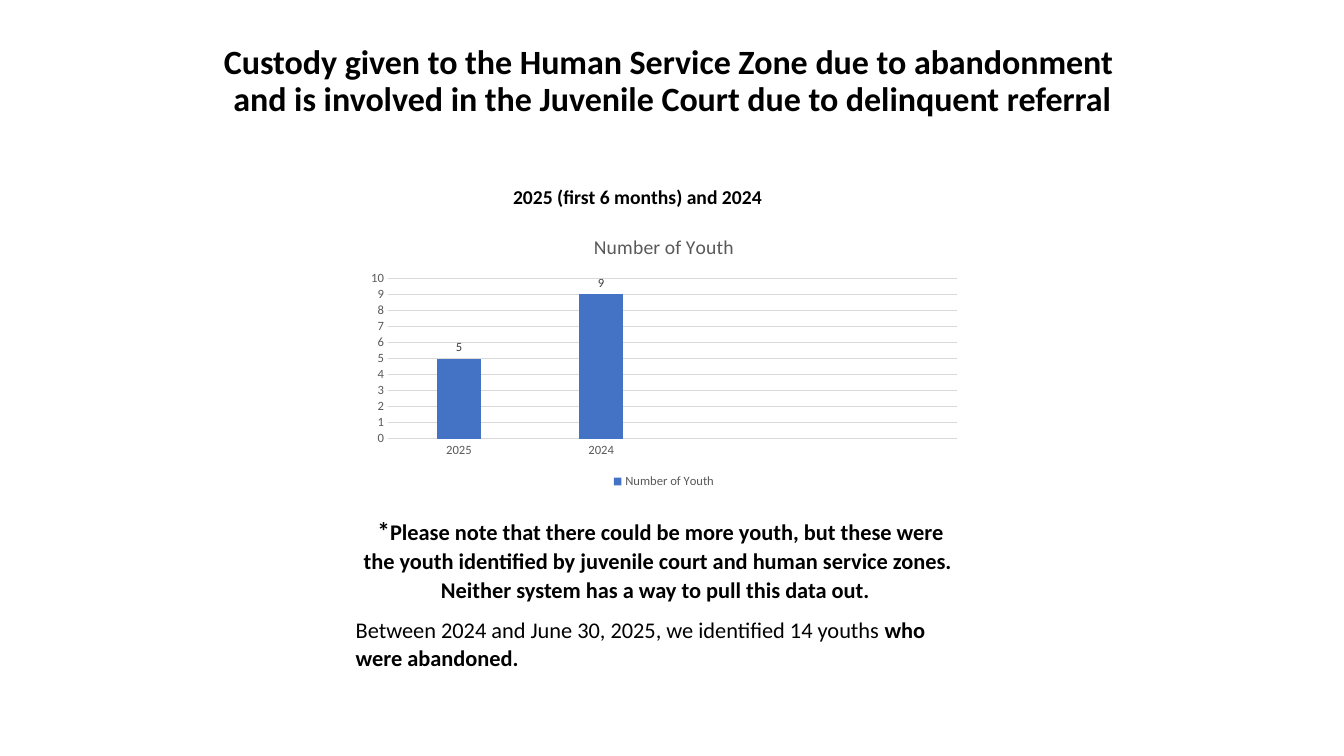
import pptx
import pptx.chart.data
import pptx.dml.color
import pptx.enum.chart
import pptx.enum.text
import pptx.util

Inches = pptx.util.Inches
Pt = pptx.util.Pt
Align = pptx.enum.text.PP_ALIGN
Chart = pptx.enum.chart


def color(code):
    return pptx.dml.color.RGBColor.from_string(code)


class Page:
    face = "Calibri"
    ink = "000000"
    gray = "595959"
    rule = "D9D9D9"
    bar = "4472C4"

    def __init__(self, deck):
        self.slide = deck.slides.add_slide(deck.slide_layouts[5])

    def style(self, font, size, code, bold=False):
        font.name = self.face
        font.size = Pt(size)
        font.bold = bold
        font.color.rgb = color(code)

    def place(self, shape, box):
        shape.left, shape.top, shape.width, shape.height = map(Inches, box)
        frame = shape.text_frame
        frame.word_wrap = True
        frame.auto_size = pptx.enum.text.MSO_AUTO_SIZE.NONE
        frame.vertical_anchor = pptx.enum.text.MSO_ANCHOR.TOP
        return frame

    def title(self, text, box):
        frame = self.place(self.slide.shapes.title, box)
        frame.text = text
        para = frame.paragraphs[0]
        para.alignment = Align.CENTER
        para.line_spacing = 0.9
        self.style(para.font, 24.3, self.ink, True)

    def text(self, paras, box, space=1.0, after=0):
        shape = self.slide.shapes.add_textbox(*map(Inches, box))
        frame = self.place(shape, box)
        for i, (align, runs) in enumerate(paras):
            para = frame.add_paragraph() if i else frame.paragraphs[0]
            para.alignment = align
            para.line_spacing = space
            para.space_after = Pt(after)
            para.font.name = self.face
            for words, size, bold in runs:
                run = para.add_run()
                run.text = words
                self.style(run.font, size, self.ink, bold)

    def chart(self, name, cats, vals, box):
        data = pptx.chart.data.CategoryChartData()
        data.categories = cats
        data.add_series(name, vals)
        chart = self.slide.shapes.add_chart(
            Chart.XL_CHART_TYPE.COLUMN_CLUSTERED, *map(Inches, box), data
        ).chart
        self.style(chart.font, 10, self.ink)

        chart.has_title = True
        head = chart.chart_title.text_frame
        head.text = name
        self.style(head.paragraphs[0].font, 14, self.gray)

        chart.has_legend = True
        chart.legend.position = Chart.XL_LEGEND_POSITION.BOTTOM
        chart.legend.include_in_layout = False
        self.style(chart.legend.font, 9, self.gray)

        for axis in (chart.category_axis, chart.value_axis):
            axis.major_tick_mark = Chart.XL_TICK_MARK.NONE
            axis.minor_tick_mark = Chart.XL_TICK_MARK.NONE
            self.style(axis.tick_labels.font, 9, self.gray)
        chart.value_axis.format.line.fill.background()
        chart.value_axis.has_major_gridlines = True
        grid = chart.value_axis.major_gridlines
        for part in (chart.category_axis, grid):
            part.format.line.color.rgb = color(self.rule)
            part.format.line.width = Pt(0.75)

        plot = chart.plots[0]
        plot.gap_width = 219
        plot.overlap = -27
        plot.vary_by_categories = False
        row = plot.series[0]
        row.format.fill.solid()
        row.format.fill.fore_color.rgb = color(self.bar)
        row.data_labels.show_value = True
        row.data_labels.position = Chart.XL_LABEL_POSITION.OUTSIDE_END
        self.style(row.data_labels.font, 9, "404040")


def main():
    deck = pptx.Presentation()
    deck.slide_width = Inches(13.33)
    deck.slide_height = Inches(7.5)
    page = Page(deck)
    page.title(
        "Custody given to the Human Service Zone due to abandonment \v"
        "and is involved in the Juvenile Court due to delinquent referral",
        (0.92, 0.4, 11.5, 1.12),
    )
    page.text(
        [(Align.LEFT, [("2025 (first 6 months) and 2024", 14, True)])],
        (4.99, 1.79, 2.73, 0.64),
    )
    page.chart(
        "Number of Youth",
        ["2025", "2024", "", ""],
        [5, 9, None, None],
        (3.56, 2.17, 6.05, 2.72),
    )
    note = (
        "Please note that there could be more youth, but these were the youth "
        "identified by juvenile court and human service zones. "
        "Neither system has a way to pull this data out. "
    )
    found = "Between 2024 and June 30, 2025, we identified 14 youths"
    page.text(
        [
            (Align.CENTER, [(" *", 18, True), (note, 16, True)]),
            (Align.LEFT, [(found, 16, False), (" who were abandoned.", 16, True)]),
        ],
        (3.43, 5.04, 6.19, 1.68),
        space=1.07,
        after=8,
    )
    deck.save("out.pptx")


if __name__ == "__main__":
    main()
